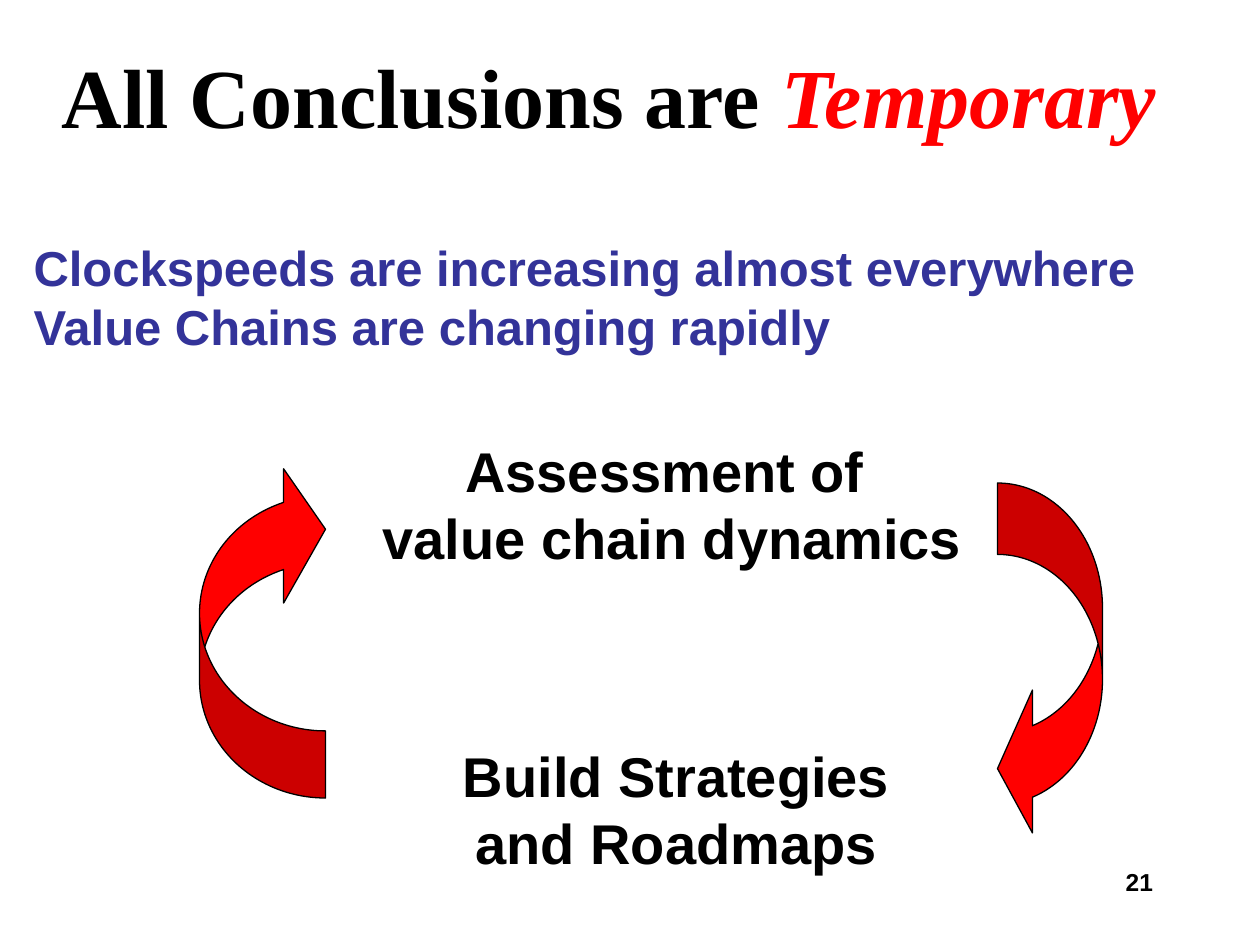
from dataclasses import dataclass

from lxml import etree
from pptx import Presentation
from pptx.dml.color import RGBColor
from pptx.enum.shapes import MSO_SHAPE
from pptx.enum.text import MSO_ANCHOR, MSO_AUTO_SIZE, PP_ALIGN
from pptx.oxml.ns import qn
from pptx.util import Pt

LEFT, CENTER, RIGHT = PP_ALIGN.LEFT, PP_ALIGN.CENTER, PP_ALIGN.RIGHT
TOP, MIDDLE = MSO_ANCHOR.TOP, MSO_ANCHOR.MIDDLE
CURVED_ARROW = MSO_SHAPE.CURVED_LEFT_ARROW
TITLE_AND_CONTENT = 1


@dataclass(frozen=True)
class Theme:
    black: RGBColor = RGBColor(0x00, 0x00, 0x00)
    white: RGBColor = RGBColor(0xFF, 0xFF, 0xFF)
    red: RGBColor = RGBColor(0xFF, 0x00, 0x00)
    indigo: RGBColor = RGBColor(0x33, 0x33, 0x99)
    title_font: str = "Times New Roman"
    body_font: str = "Arial"
    title_size: int = 48
    body_size: int = 28
    label_size: int = 32
    number_size: int = 14
    outline: float = 0.75


def add_text(paragraph, text, *, font, size, color, italic=False):
    run = paragraph.add_run()
    run.text = text
    run.font.name = font
    run.font.size = Pt(size)
    run.font.bold = True
    run.font.italic = italic
    run.font.color.rgb = color


class SlideBuilder:
    def __init__(self, slide, theme):
        self.slide = slide
        self.theme = theme

    def place(self, shape, box):
        shape.left, shape.top, shape.width, shape.height = map(Pt, box)

    def frame(self, shape, *, wrap, anchor=TOP):
        text_frame = shape.text_frame
        text_frame.auto_size = MSO_AUTO_SIZE.NONE
        text_frame.word_wrap = wrap
        text_frame.vertical_anchor = anchor
        return text_frame

    def write_lines(self, text_frame, lines, alignment, **text_format):
        for index, line in enumerate(lines):
            paragraph = text_frame.paragraphs[0] if index == 0 else text_frame.add_paragraph()
            paragraph.alignment = alignment
            paragraph.space_before = Pt(0)
            add_text(paragraph, line, font=self.theme.body_font, **text_format)

    def title(self, box, plain, emphasis):
        shape = self.slide.shapes.title
        self.place(shape, box)
        shape.fill.solid()
        shape.fill.fore_color.rgb = self.theme.white
        paragraph = self.frame(shape, wrap=True, anchor=MIDDLE).paragraphs[0]
        paragraph.alignment = CENTER
        style = {"font": self.theme.title_font, "size": self.theme.title_size}
        add_text(paragraph, plain, color=self.theme.black, **style)
        add_text(paragraph, emphasis, color=self.theme.red, italic=True, **style)

    def body(self, box, lines):
        shape = self.slide.placeholders[1]
        self.place(shape, box)
        text_frame = self.frame(shape, wrap=False)
        self.write_lines(text_frame, lines, LEFT,
                         size=self.theme.body_size, color=self.theme.indigo)
        # Plain lines without bullet or hanging indent
        for paragraph in text_frame.paragraphs:
            properties = paragraph._p.get_or_add_pPr()
            properties.set("marL", "0")
            properties.set("indent", "0")
            etree.SubElement(properties, qn("a:buNone"))

    def text_box(self, box, lines, *, size, alignment=CENTER, wrap=False):
        shape = self.slide.shapes.add_textbox(*map(Pt, box))
        self.write_lines(self.frame(shape, wrap=wrap), lines, alignment,
                         size=size, color=self.theme.black)

    def curved_arrow(self, box, thickness, rotation=0):
        shape = self.slide.shapes.add_shape(CURVED_ARROW, *map(Pt, box))
        shape.shadow.inherit = False
        shape.rotation = rotation
        # The head is twice as wide as the band
        for index, value in enumerate((thickness, 2 * thickness, 0.333)):
            shape.adjustments[index] = value
        shape.fill.solid()
        shape.fill.fore_color.rgb = self.theme.red
        shape.line.color.rgb = self.theme.black
        shape.line.width = Pt(self.theme.outline)


def main():
    presentation = Presentation()
    presentation.slide_width, presentation.slide_height = Pt(720), Pt(540)
    slide = presentation.slides.add_slide(presentation.slide_layouts[TITLE_AND_CONTENT])
    theme = Theme()
    builder = SlideBuilder(slide, theme)

    # Title and opening statements
    builder.title((18, 18, 660, 72), "All Conclusions are", " Temporary")
    builder.body((12, 132, 651, 75), ["Clockspeeds are increasing almost everywhere",
                                      "Value Chains are changing rapidly"])

    # Two steps of the cycle
    builder.text_box((210, 246, 348.5, 85), ["Assessment of ", "value chain dynamics"],
                     size=theme.label_size)
    builder.text_box((256, 420, 261, 85), ["Build Strategies", "and Roadmaps"],
                     size=theme.label_size)

    # Arrows that close the cycle
    builder.curved_arrow((570, 276, 60, 204), 0.68)
    builder.curved_arrow((114, 264, 72, 192), 0.533, rotation=180)

    # Page number
    builder.text_box((516, 492, 150, 36), ["21"], size=theme.number_size,
                     alignment=RIGHT, wrap=True)

    presentation.save("out.pptx")


if __name__ == "__main__":
    main()
